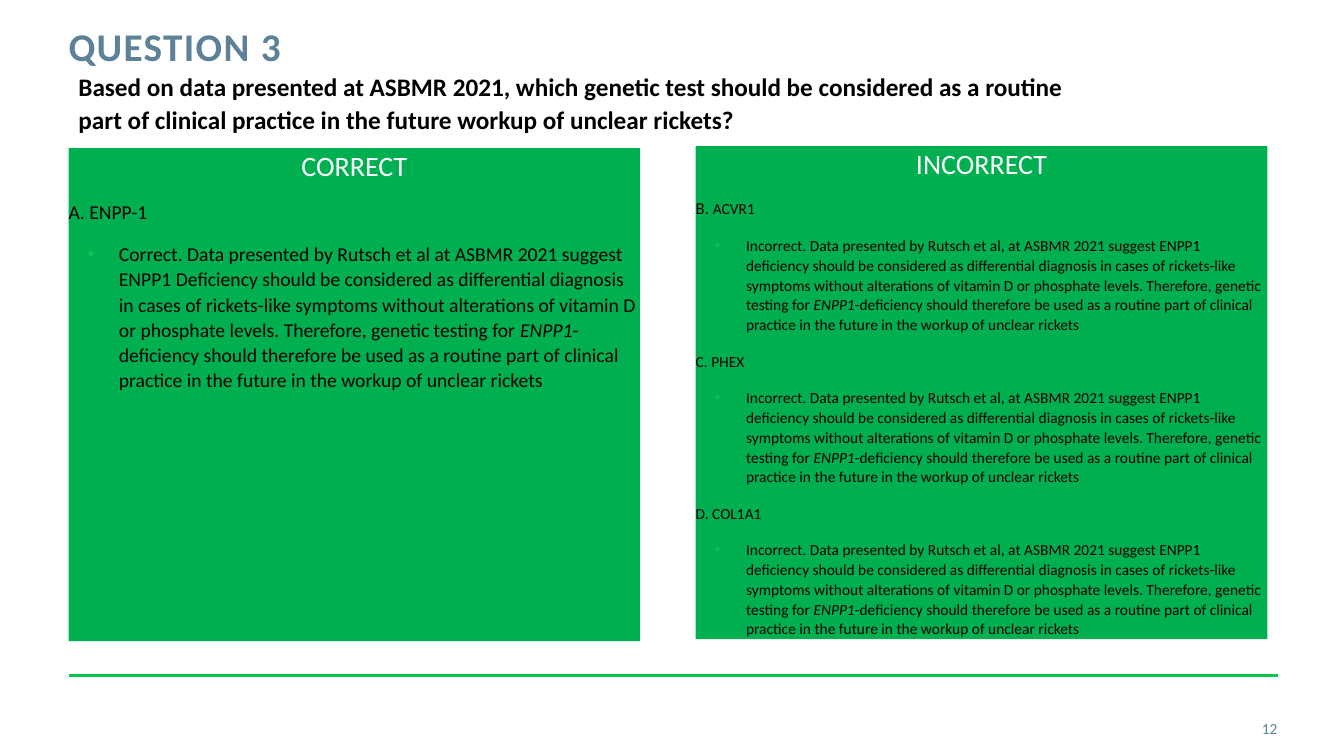
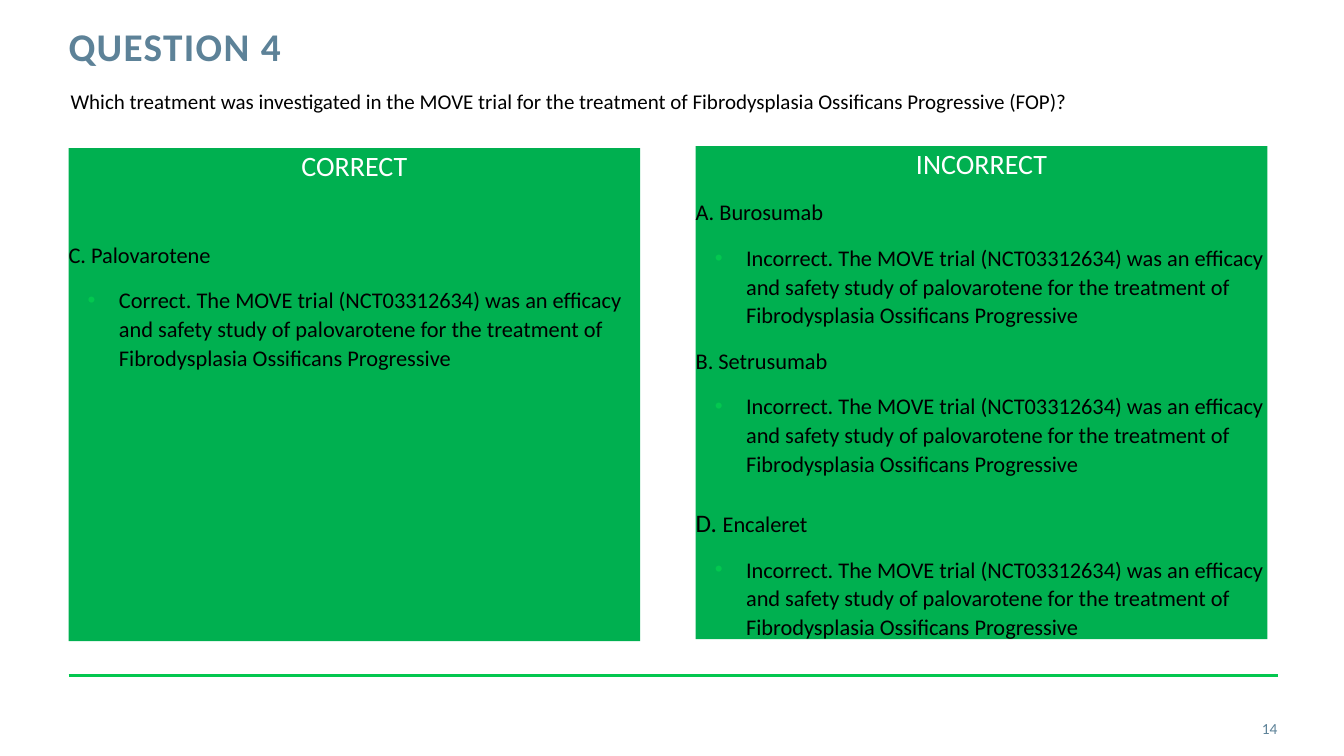
"""Builds two quiz answer slides with correct and incorrect panels."""
from lxml import etree
from pptx import Presentation
from pptx import util as u
from pptx.dml.color import RGBColor
from pptx.enum import shapes, text
from pptx.oxml.ns import qn

SLATE, GREEN, LINE, BLACK, WHITE = "5D8298", "00B050", "03C74F", "000000", "FFFFFF"
LEFT, CENTER, RIGHT = text.PP_ALIGN.LEFT, text.PP_ALIGN.CENTER, text.PP_ALIGN.RIGHT

RICKETS = (
    "ENPP1 {} should be considered as differential diagnosis in cases of rickets-like symptoms "
    "without alterations of vitamin D or phosphate levels. Therefore, genetic testing for "
    "|ENPP1|-deficiency should therefore be used as a routine part of clinical practice "
    "in the future in the workup of unclear rickets"
)
MOVE = (
    "The MOVE trial (NCT03312634) was an efficacy and safety study of palovarotene "
    "for the treatment of Fibrodysplasia Ossificans Progressive"
)
QUESTIONS = [
    {
        "title": "QUESTION 3",
        "number": "12",
        "question": "Based on data presented at ASBMR 2021, which genetic test should be considered "
                    "as a routine part of clinical practice in the future workup of unclear rickets?",
        "place": (0.68, 0.64, 10.24, 0.73), "inset": (0.1, 0.05), "size": 18, "bold": True,
        "panels": [
            ("CORRECT", 14, [("A. ", 14, "ENPP-1", 12)],
             "Correct. Data presented by Rutsch et al at ASBMR 2021 suggest "
             + RICKETS.format("Deficiency")),
            ("INCORRECT", 11,
             [("B. ", 12, "ACVR1", 12), ("C. ", 11, "PHEX", 12), ("D. ", 11, "COL1A1", 12)],
             "Incorrect. Data presented by Rutsch et al, at ASBMR 2021 suggest "
             + RICKETS.format("deficiency")),
        ],
    },
    {
        "title": "QUESTION 4",
        "number": "14",
        "question": "Which treatment was investigated in the MOVE trial for the treatment of "
                    "Fibrodysplasia Ossificans Progressive (FOP)?",
        "place": (0.7, 0.86, 12, 0.77), "inset": (0, 0), "size": 15, "bold": False,
        "panels": [
            ("CORRECT", 16, [("C. ", 16, "Palovarotene", 41)], "Correct. " + MOVE),
            ("INCORRECT", 16,
             [("A. ", 16, "Burosumab", 12), ("B. ", 16, "Setrusumab", 12),
              ("D. ", 18, "Encaleret", 20)],
             "Incorrect. " + MOVE),
        ],
    },
]


def add_frame(page, place, inset=(0, 0), fill=None):
    """Add a text box, or a filled rectangle, and return its text frame."""
    place = [u.Inches(length) for length in place]
    if fill:
        box = page.shapes.add_shape(shapes.MSO_SHAPE.RECTANGLE, *place)
        box.shadow.inherit = False
        box.fill.solid()
        box.fill.fore_color.rgb = RGBColor.from_string(fill)
        box.line.fill.background()
    else:
        box = page.shapes.add_textbox(*place)
    frame = box.text_frame
    frame.word_wrap = True
    frame.vertical_anchor = text.MSO_ANCHOR.TOP
    frame.margin_left = frame.margin_right = u.Inches(inset[0])
    frame.margin_top = frame.margin_bottom = u.Inches(inset[1])
    return frame


def write(para, words, size, colour=BLACK, bold=False, align=LEFT, before=0, spacing=1.07,
          bullet=False):
    """Fill a paragraph; words between bars are italic."""
    if bullet:
        props = para._p.get_or_add_pPr()
        props.set("marL", str(u.Inches(0.5)))
        props.set("indent", str(u.Inches(-0.31)))
        tint = etree.SubElement(props, qn("a:buClr"))
        etree.SubElement(tint, qn("a:srgbClr"), val=LINE)
        etree.SubElement(props, qn("a:buFont"), typeface="Arial")
        etree.SubElement(props, qn("a:buChar"), char="•")
    para.alignment = align
    para.line_spacing = spacing
    para.space_before = u.Pt(before)
    para.font.name = "Calibri"
    para.font.size = u.Pt(size)
    para.font.bold = bold
    para.font.color.rgb = RGBColor.from_string(colour)
    for index, part in enumerate(words.split("|")):
        span = para.add_run()
        span.text = part
        if index % 2:
            span.font.italic = True


deck = Presentation()
deck.slide_width, deck.slide_height = u.Inches(13.33), u.Inches(7.5)

for item in QUESTIONS:
    page = deck.slides.add_slide(deck.slide_layouts[6])

    rule = page.shapes.add_connector(
        shapes.MSO_CONNECTOR.STRAIGHT,
        u.Inches(0.68), u.Inches(6.7), u.Inches(12.68), u.Inches(6.7))
    rule.line.color.rgb = RGBColor.from_string(LINE)
    rule.line.width = u.Pt(2)
    etree.SubElement(rule._element.spPr, qn("a:effectLst"))

    title = add_frame(page, (0.68, 0.27, 9.56, 0.88)).paragraphs[0]
    write(title, item["title"], 28, SLATE, bold=True, spacing=u.Pt(30))
    title.runs[0]._r.get_or_add_rPr().set("spc", "100")

    number = add_frame(page, (11.81, 7.03, 0.86, 0.4))
    number.vertical_anchor = text.MSO_ANCHOR.MIDDLE
    write(number.paragraphs[0], item["number"], 11, SLATE, align=RIGHT, spacing=1.0)

    for (left, top), panel in zip([(0.68, 1.47), (6.9, 1.45)], item["panels"]):
        heading, size, answers, reason = panel
        frame = add_frame(page, (left, top, 5.67, 4.89), fill=GREEN)
        write(frame.paragraphs[0], heading, 20, WHITE, align=CENTER, spacing=1.0)
        for letter, letter_size, name, before in answers:
            answer = frame.add_paragraph()
            if letter_size == size:
                write(answer, letter + name, size, before=before)
            else:
                write(answer, letter, size, before=before)
                answer.runs[0].font.size = u.Pt(letter_size)
                answer.add_run().text = name
            write(frame.add_paragraph(), reason, size, before=12, bullet=True)

    question = add_frame(page, item["place"], item["inset"])
    write(question.paragraphs[0], item["question"], item["size"], bold=item["bold"])

deck.save("out.pptx")
